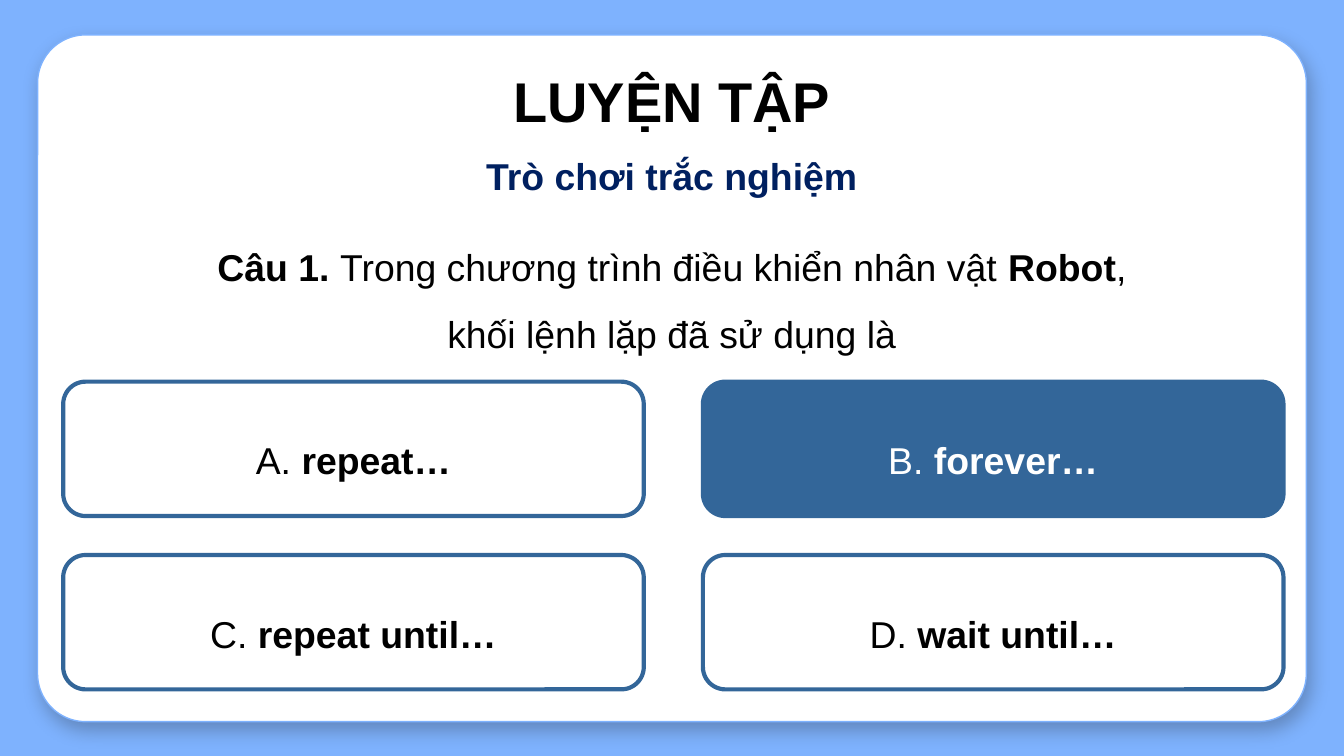
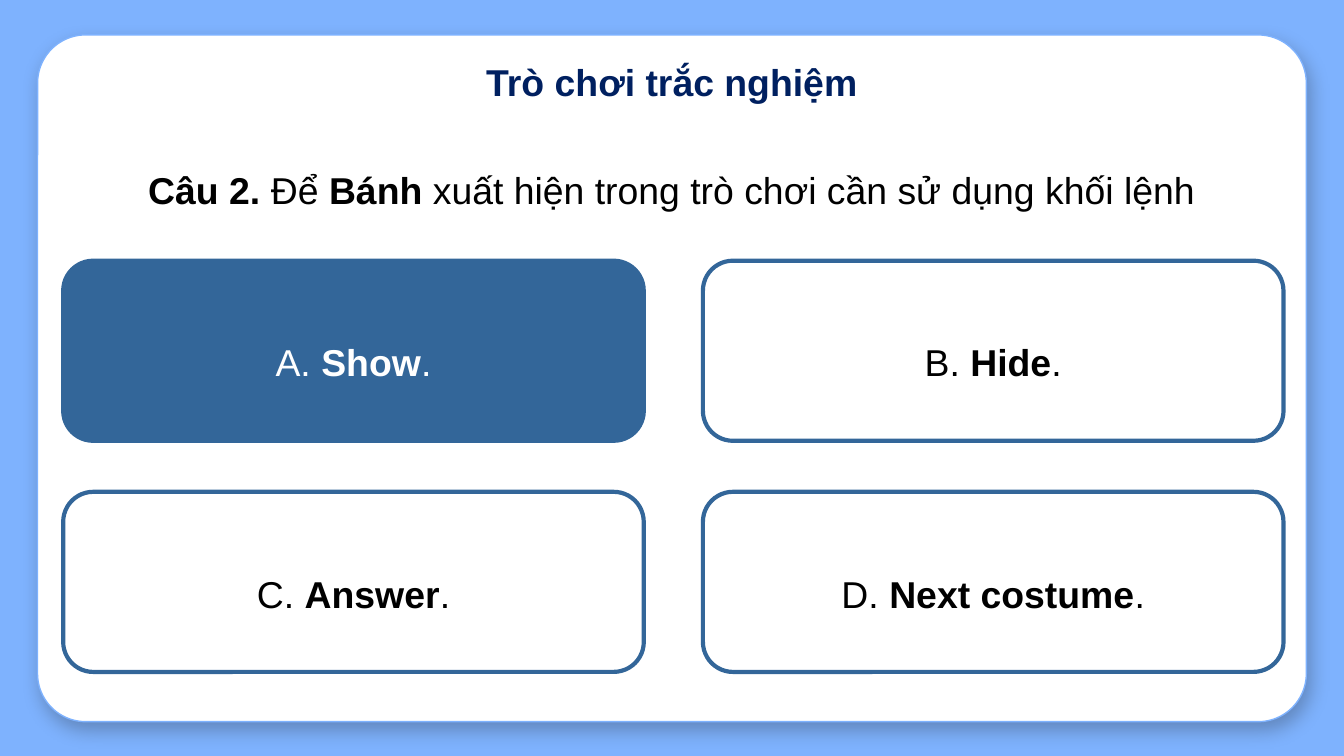
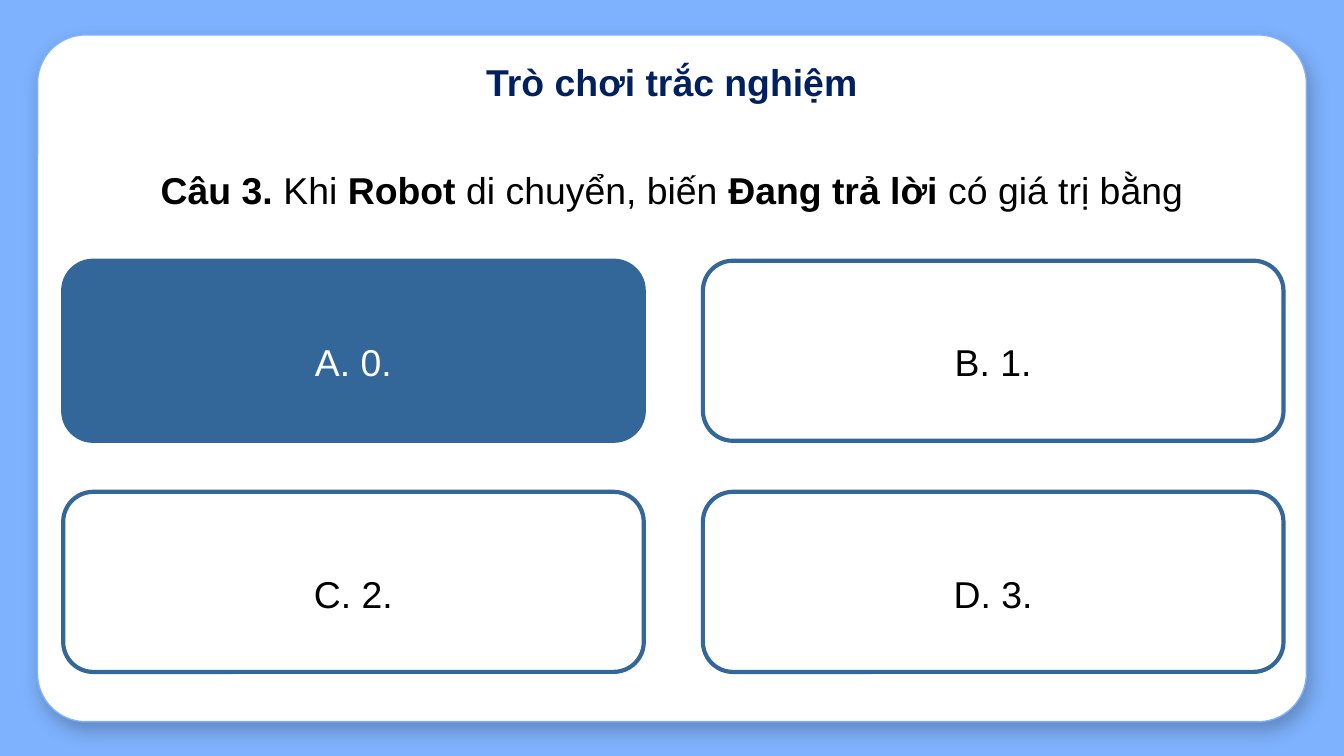
from lxml.etree import SubElement
from pptx import Presentation
from pptx.dml.color import RGBColor
from pptx.enum.shapes import MSO_SHAPE
from pptx.enum.text import MSO_ANCHOR, MSO_AUTO_SIZE, PP_ALIGN
from pptx.oxml.ns import qn
from pptx.util import Inches, Pt

COLORS = {
    "sky": "7EB2FE",
    "card": "FFFFFF",
    "accent": "336699",
    "heading": "002060",
    "ink": "000000",
    "shadow": "191919",
}
FONT = "Arial"
SLIDE_WIDTH = 10
SLIDE_HEIGHT = SLIDE_WIDTH * 9 / 16
ANSWER_LEFT, ANSWER_WIDTH, ANSWER_STEP = 0.47, 4.32, 4.76
GAME = "**Trò chơi trắc nghiệm**"

QUESTIONS = [
    {
        "lesson": "**LUYỆN TẬP**",
        "game_top": 1.09,
        "question": "**Câu 1. **Trong chương trình điều khiển nhân vật **Robot**,\n"
                    "khối lệnh lặp đã sử dụng là",
        "question_box": (0, 1.6, SLIDE_WIDTH, 1.05),
        "answers": ["A. **repeat…**", "B. **forever…**",
                    "C. **repeat until…**", "D. **wait until…**"],
        "correct": 1,
        "rows": (2.84, 4.13),
        "answer_height": 1,
    },
    {
        "question": "**Câu 2. **Để **Bánh** xuất hiện trong trò chơi cần sử dụng khối lệnh",
        "answers": ["A. **Show**.", "B. **Hide**.",
                    "C. **Answer**.", "D. **Next costume**."],
        "correct": 0,
    },
    {
        "question": "**Câu 3. **Khi **Robot** di chuyển, biến **Đang trả lời **có giá trị bằng",
        "answers": ["A. 0.", "B. 1.", "C. 2.", "D. 3."],
        "correct": 0,
    },
]


def rgb(name):
    """Return the named palette colour."""
    return RGBColor.from_string(COLORS[name])


def write_text(shape, text, size=20, color="ink", spacing=1.5,
               anchor=MSO_ANCHOR.MIDDLE, auto_size=MSO_AUTO_SIZE.NONE):
    """Write centred lines into a shape, with **bold** parts."""
    frame = shape.text_frame
    frame.word_wrap = True
    frame.auto_size = auto_size
    frame.vertical_anchor = anchor
    for number, line in enumerate(text.split("\n")):
        paragraph = frame.add_paragraph() if number else frame.paragraphs[0]
        paragraph.alignment = PP_ALIGN.CENTER
        paragraph.line_spacing = spacing
        for position, part in enumerate(line.split("**")):
            if part:
                run = paragraph.add_run()
                run.text = part
                run.font.name = FONT
                run.font.size = Pt(size)
                run.font.bold = position % 2 == 1
                run.font.color.rgb = rgb(color)


def add_rounded(slide, box, fill, line, line_width):
    """Add a rounded rectangle without shadow."""
    rounded = slide.shapes.add_shape(MSO_SHAPE.ROUNDED_RECTANGLE, *map(Inches, box))
    rounded.shadow.inherit = False
    rounded.fill.solid()
    rounded.fill.fore_color.rgb = rgb(fill)
    rounded.line.color.rgb = rgb(line)
    rounded.line.width = Pt(line_width)
    return rounded


def add_text(slide, box, text, **text_format):
    """Add a text box that grows with its text."""
    label = slide.shapes.add_textbox(*map(Inches, box))
    write_text(label, text, anchor=MSO_ANCHOR.TOP,
               auto_size=MSO_AUTO_SIZE.SHAPE_TO_FIT_TEXT, **text_format)


def set_title(slide, box, text, **text_format):
    """Move the title placeholder and fill it."""
    title = slide.shapes.title
    title.left, title.top, title.width, title.height = map(Inches, box)
    write_text(title, text, **text_format)


def add_soft_shadow(shape):
    """Give a shape a soft shadow to the lower right."""
    effects = shape.element.spPr.find(qn("a:effectLst"))
    shadow = SubElement(effects, qn("a:outerShdw"), blurRad=str(Pt(10.1)),
                        dist=str(Pt(4.5)), dir=str(67 * 60000),
                        algn="bl", rotWithShape="0")
    tint = SubElement(shadow, qn("a:srgbClr"), val=COLORS["shadow"])
    SubElement(tint, qn("a:alpha"), val="27000")


def decorate_layout(layout, slide):
    """Place the background and the white card on the shared layout."""
    for placeholder in list(layout.placeholders):
        if placeholder.placeholder_format.idx:
            layout.shapes.element.remove(placeholder.element)
    layout.background.fill.solid()
    layout.background.fill.fore_color.rgb = rgb("sky")
    card = add_rounded(slide, (0.28, 0.26, 9.44, 5.11), "card", "sky", 0.75)
    card.adjustments[0] = 0.07
    add_soft_shadow(card)
    layout.shapes.element.insert(2, card.element)


def add_answers(slide, answers, correct, rows, height):
    """Add the answers in two columns, with the correct one filled."""
    for number, answer in enumerate(answers):
        row, column = divmod(number, 2)
        chosen = number == correct
        box = (ANSWER_LEFT + column * ANSWER_STEP, rows[row], ANSWER_WIDTH, height)
        button = add_rounded(slide, box, "accent" if chosen else "card", "accent", 2.25)
        write_text(button, answer, color="card" if chosen else "ink")


def fill_question(slide, question, answers, correct, lesson=None, game_top=0.39,
                  question_box=(0, 1.03, SLIDE_WIDTH, 0.54),
                  rows=(1.94, 3.66), answer_height=1.34):
    """Fill one quiz slide."""
    game_box = (0, game_top, SLIDE_WIDTH, 0.44)
    game_format = {"color": "heading", "spacing": 1.0}
    if lesson:
        set_title(slide, (0, 0.28, SLIDE_WIDTH, 0.68), lesson, size=30)
        frame = slide.shapes.title.text_frame
        frame.margin_top = frame.margin_bottom = Inches(0.1)
        add_text(slide, game_box, GAME, **game_format)
    else:
        set_title(slide, game_box, GAME, **game_format)
    add_answers(slide, answers, correct, rows, answer_height)
    add_text(slide, question_box, question)


def main():
    """Build the quiz and save it."""
    presentation = Presentation()
    presentation.slide_width = Inches(SLIDE_WIDTH)
    presentation.slide_height = Inches(SLIDE_HEIGHT)
    layout = presentation.slide_layouts[5]
    for number, content in enumerate(QUESTIONS):
        slide = presentation.slides.add_slide(layout)
        if number == 0:
            decorate_layout(layout, slide)
        fill_question(slide, **content)
    presentation.save("out.pptx")


if __name__ == "__main__":
    main()
